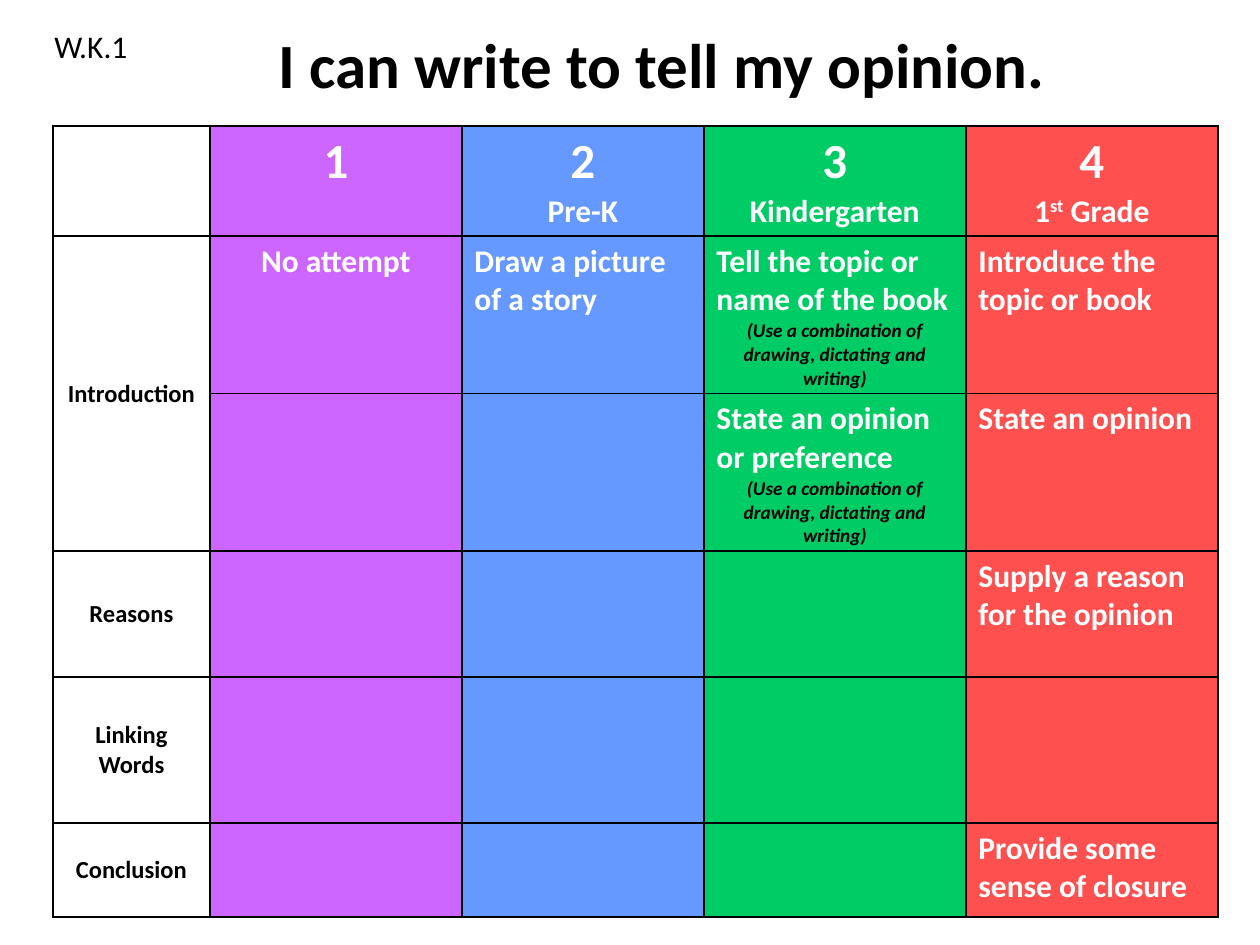
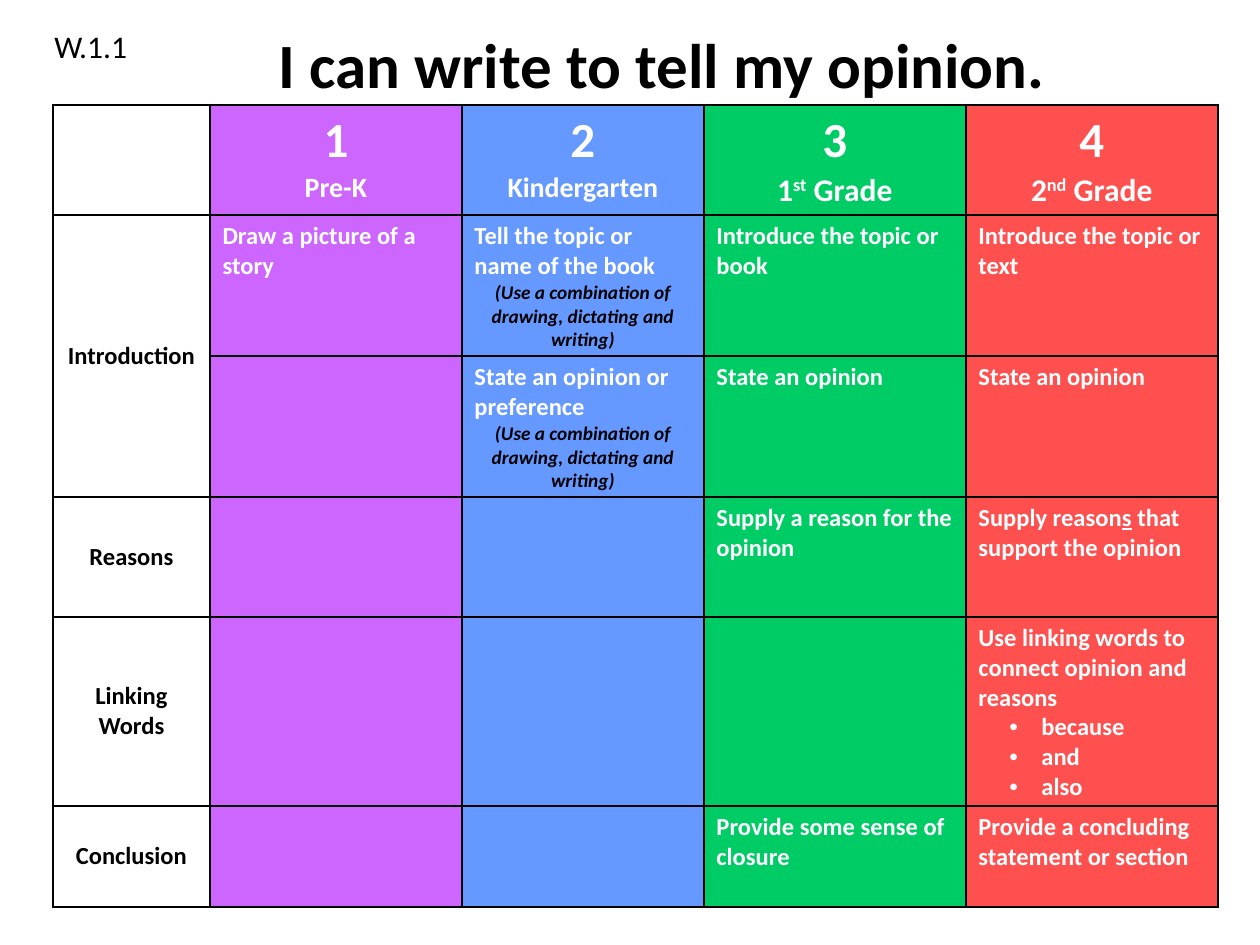
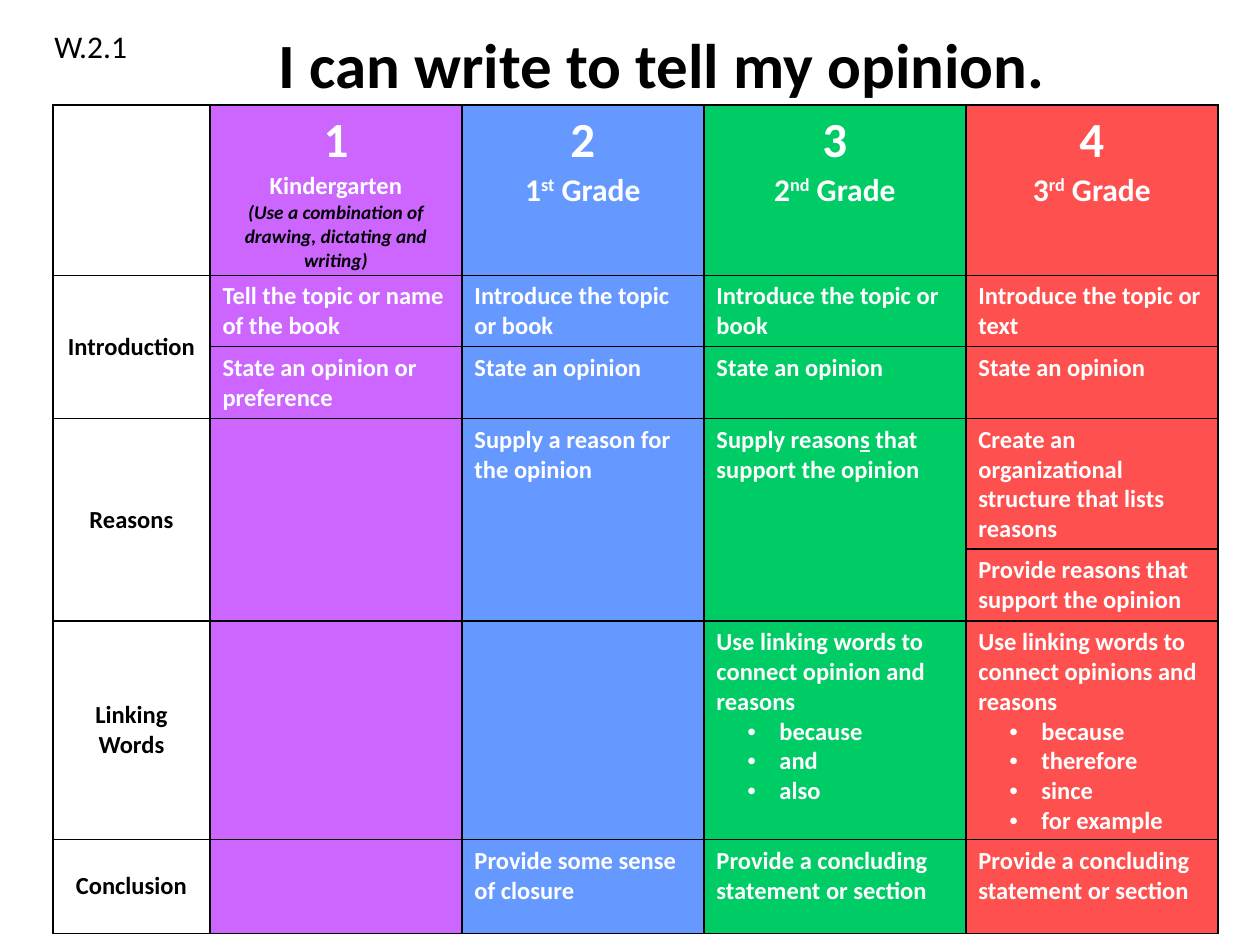
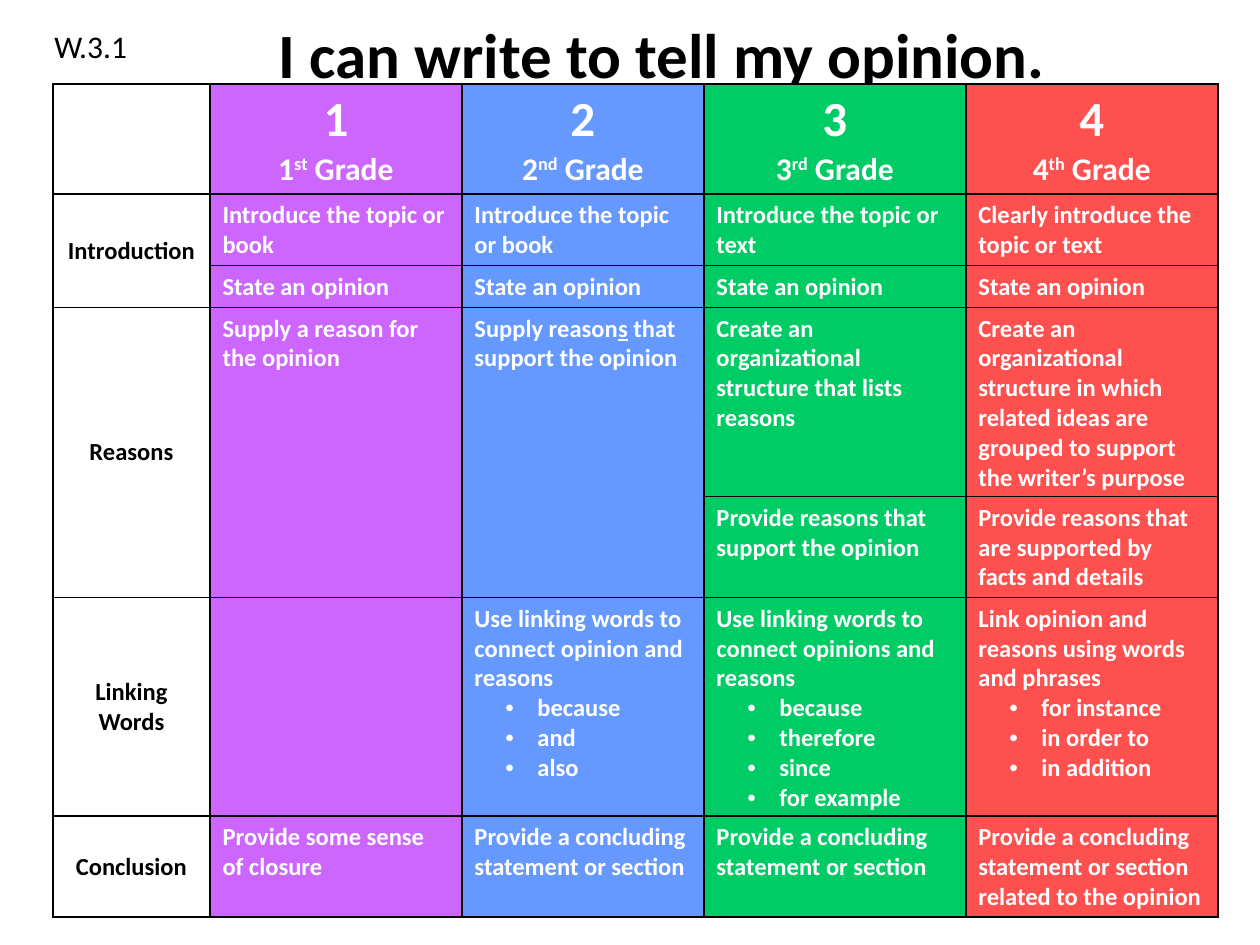
from dataclasses import dataclass, replace

from lxml.etree import SubElement
from pptx import Presentation
from pptx.dml.color import RGBColor
from pptx.enum.text import MSO_ANCHOR, PP_ALIGN
from pptx.oxml.ns import qn
from pptx.util import Pt

PX = 914400 // 126


@dataclass(frozen=True)
class Theme:
    font: str = "Calibri"
    ink: str = "000000"
    paper: str = "FFFFFF"
    score_fills: tuple = ("CC66FF", "6699FF", "00CC66", "FF5050")
    title_size: int = 36
    score_size: int = 28
    code_size: int = 18
    grade_size: int = 18
    section_size: int = 14
    note_size: int = 11
    border_points: int = 1


THEME = Theme()
TITLE = "I can write to tell my opinion."
NOTE = "(Use a combination of drawing, dictating and writing)"
COLUMN_WIDTHS = (157, 252, 242, 262, 252)
TABLE_LEFT = 53


@dataclass(frozen=True)
class Line:
    text: str
    size: int
    color: str = THEME.paper
    bold: bool = True
    italic: bool = False
    align: PP_ALIGN = PP_ALIGN.LEFT
    bullet: bool = False
    superscript: bool = False


@dataclass(frozen=True)
class Grade:
    name: str = ""
    introduction: str = ""
    opinion: str = ""
    reasons: tuple = ("",)
    linking: str = ""
    linking_words: tuple = ()
    conclusion: str = ""
    note: str = ""
    align: PP_ALIGN = PP_ALIGN.LEFT


@dataclass(frozen=True)
class Rubric:
    code: str
    grades: tuple
    row_heights: tuple
    table_top: int
    title_top: int = 0
    body_size: int = 14
    stage_size: int = 18
    note_in_header: bool = False


NO_ATTEMPT = Grade(introduction="No attempt", align=PP_ALIGN.CENTER)
PRE_K = Grade("Pre-K", "Draw a picture of a story")
KINDERGARTEN = Grade(
    "Kindergarten",
    "Tell the topic or name of the book",
    "State an opinion or preference",
    note=NOTE,
)
FIRST = Grade(
    "1|st| Grade",
    "Introduce the topic or book",
    "State an opinion",
    ("Supply a reason for the opinion",),
    conclusion="Provide some sense of closure",
)
SECOND = replace(
    FIRST,
    name="2|nd| Grade",
    reasons=("Supply reason|s| that support the opinion",),
    linking="Use linking words to connect opinion and reasons",
    linking_words=("because", "and", "also"),
    conclusion="Provide a concluding statement or section",
)
THIRD = replace(
    SECOND,
    name="3|rd| Grade",
    introduction="Introduce the topic or text",
    reasons=(
        "Create an organizational structure that lists reasons",
        "Provide reasons that support the opinion",
    ),
    linking="Use linking words to connect opinions and reasons",
    linking_words=("because", "therefore", "since", "for example"),
)
FOURTH = replace(
    THIRD,
    name="4|th| Grade",
    introduction="Clearly introduce the topic or text",
    reasons=(
        "Create an organizational structure in which related ideas are "
        "grouped to support the writer’s purpose",
        "Provide reasons that are supported by facts and details",
    ),
    linking="Link opinion and reasons using words and phrases",
    linking_words=("for instance", "in order to", "in addition"),
    conclusion="Provide a concluding statement or section related to the opinion",
)

RUBRICS = (
    Rubric("W.K.1", (NO_ATTEMPT, PRE_K, KINDERGARTEN, FIRST),
           (110, 157, 157, 126, 146, 94), table_top=126, body_size=18),
    Rubric("W.1.1", (PRE_K, KINDERGARTEN, FIRST,
                     replace(SECOND, introduction=THIRD.introduction)),
           (110, 140, 141, 120, 189, 101), table_top=105, stage_size=16),
    Rubric("W.2.1", (KINDERGARTEN, FIRST, SECOND, THIRD),
           (170, 71, 72, 130, 72, 218, 94), table_top=105, stage_size=14,
           note_in_header=True),
    Rubric("W.3.1", (FIRST, SECOND, THIRD, FOURTH),
           (110, 71, 42, 189, 101, 218, 101), table_top=84, title_top=-10),
)


def add_bullet(paragraph):
    paragraph.level = 1
    properties = paragraph._p.get_or_add_pPr()
    properties.set("marL", str(63 * PX))
    properties.set("indent", str(-32 * PX))
    SubElement(properties, qn("a:buFont"), typeface="Arial")
    SubElement(properties, qn("a:buChar"), char="•")


def write_line(paragraph, line):
    paragraph.alignment = line.align
    if line.bullet:
        add_bullet(paragraph)
    font = paragraph.font
    font.name = THEME.font
    font.size = Pt(line.size)
    font.bold = line.bold
    font.italic = line.italic
    font.color.rgb = RGBColor.from_string(line.color)
    for index, piece in enumerate(line.text.split("|")):
        run = paragraph.add_run()
        run.text = piece
        if index % 2 and line.superscript:
            run._r.get_or_add_rPr().set("baseline", "30000")
        elif index % 2:
            run.font.underline = True


def write_lines(text_frame, lines):
    for index, line in enumerate(lines):
        paragraph = text_frame.add_paragraph() if index else text_frame.paragraphs[0]
        write_line(paragraph, line)


def add_text(slide, left, top, width, height, line, anchor=MSO_ANCHOR.TOP):
    box = slide.shapes.add_textbox(left * PX, top * PX, width * PX, height * PX)
    box.text_frame.word_wrap = True
    box.text_frame.vertical_anchor = anchor
    write_lines(box.text_frame, [line])


def style_cell(cell, fill=None):
    properties = cell._tc.get_or_add_tcPr()
    for side in ("lnL", "lnR", "lnT", "lnB"):
        border = SubElement(properties, qn(f"a:{side}"), w=str(Pt(THEME.border_points)))
        solid = SubElement(border, qn("a:solidFill"))
        SubElement(solid, qn("a:srgbClr"), val=THEME.ink)
    if fill:
        cell.fill.solid()
        cell.fill.fore_color.rgb = RGBColor.from_string(fill)
    else:
        cell.fill.background()


def note_lines(note):
    if not note:
        return []
    return [Line(note, THEME.note_size, THEME.ink, italic=True, align=PP_ALIGN.CENTER)]


def header_lines(rubric, score, grade):
    lines = [Line(str(score), THEME.score_size, align=PP_ALIGN.CENTER)]
    if grade.name:
        size = THEME.grade_size if "|" in grade.name else rubric.stage_size
        lines.append(Line(grade.name, size, align=PP_ALIGN.CENTER, superscript=True))
    return lines + note_lines(grade.note if rubric.note_in_header else "")


def body_lines(rubric, grade, text, bullets=(), note=""):
    if not text:
        return []
    lines = [Line(text, rubric.body_size, align=grade.align)]
    lines += [Line(word, rubric.body_size, bullet=True) for word in bullets]
    return lines + note_lines(note)


def grade_cells(rubric, score, grade, reason_rows):
    note = "" if rubric.note_in_header else grade.note
    reasons = grade.reasons + ("",) * (reason_rows - len(grade.reasons))
    return [
        header_lines(rubric, score, grade),
        body_lines(rubric, grade, grade.introduction, note=note),
        body_lines(rubric, grade, grade.opinion, note=note),
        *(body_lines(rubric, grade, reason) for reason in reasons),
        body_lines(rubric, grade, grade.linking, grade.linking_words),
        body_lines(rubric, grade, grade.conclusion),
    ]


def fill_sections(table, reason_rows):
    sections = (("Introduction", 2), ("Reasons", reason_rows),
                ("Linking Words", 1), ("Conclusion", 1))
    row = 1
    for name, span in sections:
        cell = table.cell(row, 0)
        cell.vertical_anchor = MSO_ANCHOR.MIDDLE
        write_lines(cell.text_frame, [
            Line(name, THEME.section_size, THEME.ink, align=PP_ALIGN.CENTER)])
        if span > 1:
            cell.merge(table.cell(row + span - 1, 0))
        row += span


def add_rubric_table(slide, rubric):
    heights = rubric.row_heights
    frame = slide.shapes.add_table(
        len(heights), len(COLUMN_WIDTHS), TABLE_LEFT * PX, rubric.table_top * PX,
        sum(COLUMN_WIDTHS) * PX, sum(heights) * PX)
    table = frame.table
    table.first_row = table.horz_banding = False
    for column, width in zip(table.columns, COLUMN_WIDTHS):
        column.width = width * PX
    for row, height in zip(table.rows, heights):
        row.height = height * PX
        for cell, fill in zip(row.cells, (None, *THEME.score_fills)):
            style_cell(cell, fill)

    reason_rows = max(len(grade.reasons) for grade in rubric.grades)
    fill_sections(table, reason_rows)
    for score, grade in enumerate(rubric.grades, start=1):
        for row, lines in enumerate(grade_cells(rubric, score, grade, reason_rows)):
            write_lines(table.cell(row, score).text_frame, lines)
        if len(grade.reasons) < reason_rows:
            table.cell(3, score).merge(table.cell(2 + reason_rows, score))


def add_rubric_slide(presentation, rubric):
    slide = presentation.slides.add_slide(presentation.slide_layouts[6])
    add_text(slide, 126, rubric.title_top, 1071, 126,
             Line(TITLE, THEME.title_size, THEME.ink, align=PP_ALIGN.CENTER),
             MSO_ANCHOR.MIDDLE)
    add_text(slide, 42, 21, 179, 50,
             Line(rubric.code, THEME.code_size, THEME.ink, bold=False))
    add_rubric_table(slide, rubric)


def main():
    presentation = Presentation()
    presentation.slide_width = 1260 * PX
    presentation.slide_height = 945 * PX
    for rubric in RUBRICS:
        add_rubric_slide(presentation, rubric)
    presentation.save("out.pptx")


if __name__ == "__main__":
    main()
